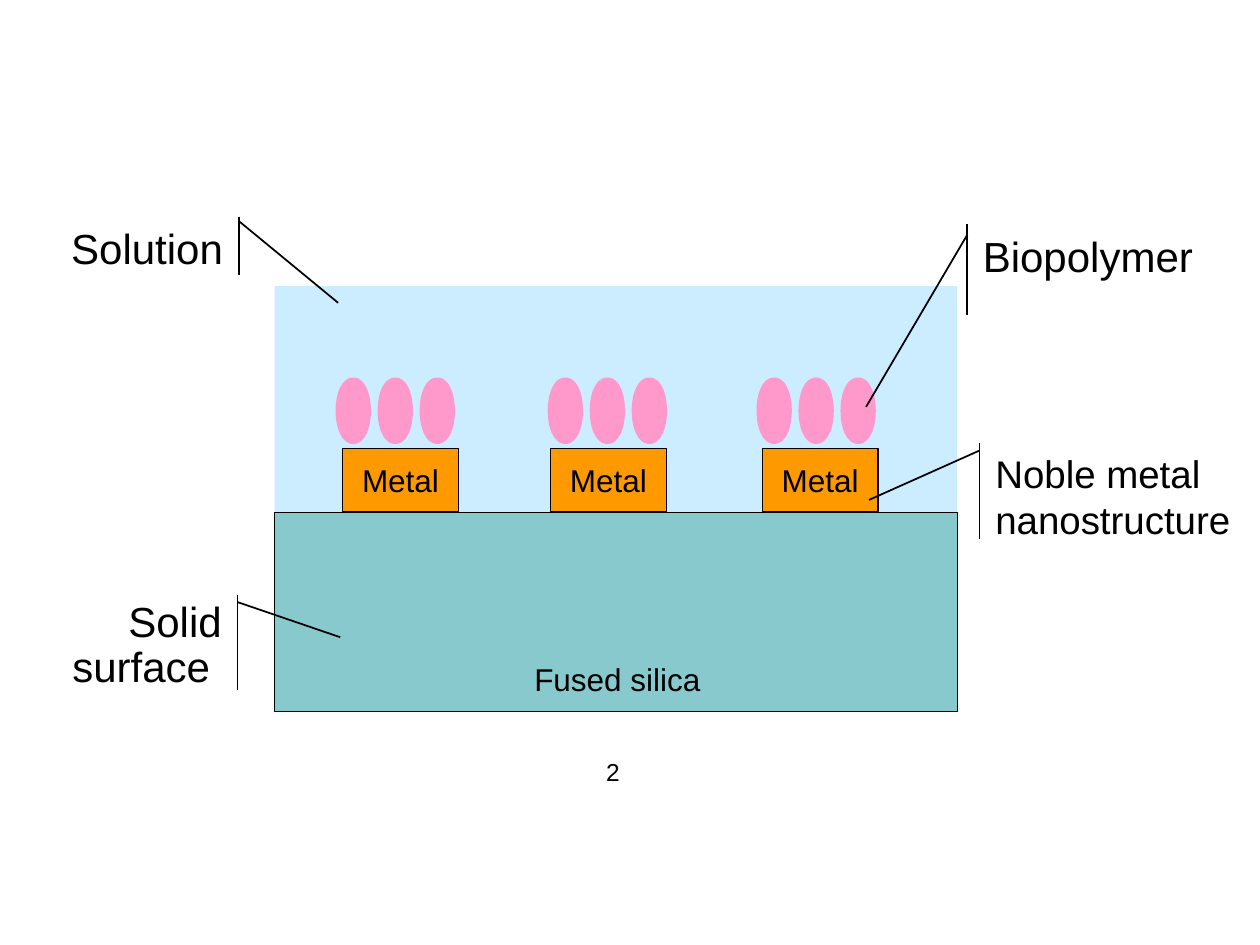
from dataclasses import dataclass

import pptx
import pptx.dml.color
import pptx.enum.shapes
import pptx.enum.text
import pptx.util

Pt = pptx.util.Pt
Shapes = pptx.enum.shapes.MSO_SHAPE
Align = pptx.enum.text.PP_ALIGN
Anchor = pptx.enum.text.MSO_ANCHOR


@dataclass(frozen=True)
class Theme:
    font: str = "Arial"
    ink: str = "000000"
    solution: str = "CCECFF"
    metal: str = "FF9900"
    biopolymer: str = "FF99CC"
    silica: str = "88C9CE"
    large: float = 24
    medium: float = 22
    body: float = 18
    small: float = 14


@dataclass(frozen=True)
class Box:
    left: float
    top: float
    width: float
    height: float

    def lengths(self) -> list:
        return [Pt(v) for v in (self.left, self.top, self.width, self.height)]


@dataclass(frozen=True)
class Callout:
    lines: tuple
    box: Box
    leader: tuple  # y and x of the start, then of the end, as parts of the box
    size: float
    align: Align = Align.LEFT
    spacing: float = 1.0


@dataclass(frozen=True)
class Site:
    """One metal block and the left edge of the biopolymers above it."""
    metal_left: float
    biopolymer_left: float


THEME = Theme()
SITES = (Site(195.8, 195.8), Site(314.6, 317), Site(435.6, 436.3))
BIOPOLYMERS_PER_SITE = 3
BIOPOLYMER_STEP = 24

CALLOUTS = (
    Callout(("Solution",), Box(0, 123.8, 130.3, 33.1),
            (0.079, 1.048, 1.489, 1.483), THEME.large, Align.RIGHT),
    Callout(("Noble metal", "nanostructure"), Box(565.9, 253.4, 154.1, 54.7),
            (0.075, -0.04, 0.591, -0.45), THEME.medium),
    Callout(("Biopolymer",), Box(558.7, 128.2, 149.8, 51.8),
            (0.115, -0.04, 2.014, -0.426), THEME.large),
    Callout(("Solid", " surface "), Box(0.7, 339.8, 128.9, 54.7),
            (0.079, 1.048, 0.446, 1.503), THEME.large, Align.RIGHT, 0.9),
)


def rgb(color: str) -> pptx.dml.color.RGBColor:
    return pptx.dml.color.RGBColor.from_string(color)


def write(shape, *lines: str, size: float, align: Align = Align.CENTER,
          anchor: Anchor = Anchor.TOP, wrap: bool = True,
          side_inset: float = 7.2, spacing: float = 1.0) -> None:
    frame = shape.text_frame
    frame.word_wrap = wrap
    frame.vertical_anchor = anchor
    frame.margin_left = frame.margin_right = Pt(side_inset)
    frame.margin_top = frame.margin_bottom = Pt(3.6)
    for index, line in enumerate(lines):
        paragraph = frame.paragraphs[0] if index == 0 else frame.add_paragraph()
        paragraph.alignment = align
        paragraph.line_spacing = spacing
        run = paragraph.add_run()
        run.text = line
        run.font.name = THEME.font
        run.font.size = Pt(size)
        run.font.color.rgb = rgb(THEME.ink)


def draw_shape(slide, kind: Shapes, box: Box, fill: str | None = None,
               line: str | None = None, weight: float = 0.75):
    shape = slide.shapes.add_shape(kind, *box.lengths())
    shape.shadow.inherit = False
    if fill:
        shape.fill.solid()
        shape.fill.fore_color.rgb = rgb(fill)
    else:
        shape.fill.background()
    if line:
        shape.line.color.rgb = rgb(line)
        shape.line.width = Pt(weight)
    else:
        shape.line.fill.background()
    return shape


def draw_site(slide, site: Site) -> None:
    metal = draw_shape(slide, Shapes.RECTANGLE, Box(site.metal_left, 256.3, 66.2, 36),
                       THEME.metal, THEME.ink)
    write(metal, "Metal", size=THEME.body, anchor=Anchor.MIDDLE, wrap=False)
    for index in range(BIOPOLYMERS_PER_SITE):
        left = site.biopolymer_left + index * BIOPOLYMER_STEP
        draw_shape(slide, Shapes.OVAL, Box(left, 219.6, 12.2, 30.2),
                   THEME.biopolymer, THEME.biopolymer, 8)


def draw_callout(slide, callout: Callout) -> None:
    shape = draw_shape(slide, Shapes.LINE_CALLOUT_1_ACCENT_BAR, callout.box,
                       line=THEME.ink, weight=1)
    for index, value in enumerate(callout.leader):
        shape.adjustments[index] = value
    write(shape, *callout.lines, size=callout.size, align=callout.align,
          side_inset=2.9, spacing=callout.spacing)


def main() -> None:
    deck = pptx.Presentation()
    deck.slide_width, deck.slide_height = Pt(720), Pt(540)
    slide = deck.slides.add_slide(deck.slide_layouts.get_by_name("Blank"))

    # Solution with the metal sites in it
    draw_shape(slide, Shapes.RECTANGLE, Box(157, 163.5, 390, 235.5), THEME.solution)
    for site in SITES:
        draw_site(slide, site)

    # Solid base
    draw_shape(slide, Shapes.RECTANGLE, Box(157, 293, 390, 113.8),
               THEME.silica, THEME.ink)
    silica_label = slide.shapes.add_textbox(*Box(162.7, 373.7, 380.2, 28.8).lengths())
    write(silica_label, "Fused silica", size=THEME.body)

    # Labels with leaders
    for callout in CALLOUTS:
        draw_callout(slide, callout)

    # Page number
    page_number = slide.shapes.add_textbox(*Box(333.4, 429.1, 33.8, 22.3).lengths())
    write(page_number, "2", size=THEME.small, side_inset=0)

    deck.save("out.pptx")


if __name__ == "__main__":
    main()
